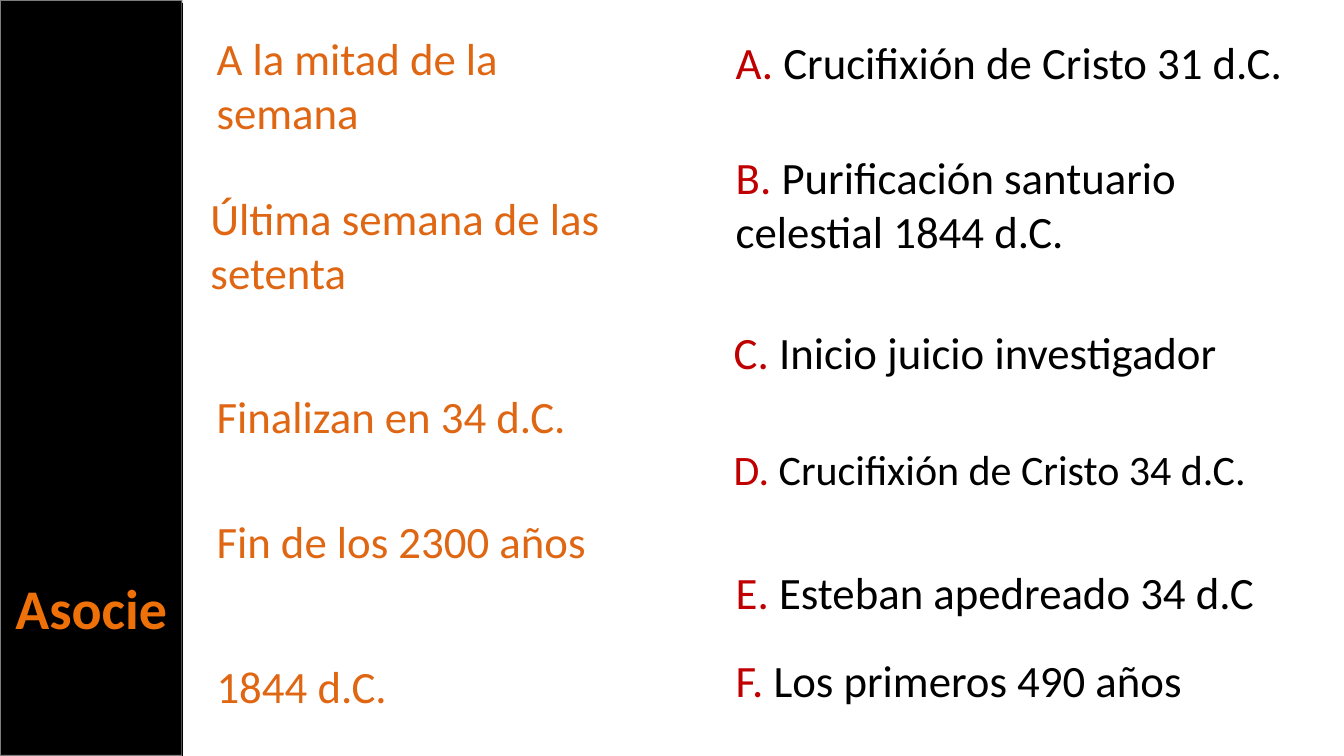
from dataclasses import dataclass

from lxml.etree import SubElement
from pptx import Presentation
from pptx.dml.color import RGBColor
from pptx.enum.shapes import MSO_CONNECTOR, MSO_SHAPE
from pptx.enum.text import MSO_ANCHOR, MSO_AUTO_SIZE, PP_ALIGN
from pptx.oxml.ns import qn
from pptx.slide import Slide
from pptx.util import Pt

BLACK = RGBColor(0x00, 0x00, 0x00)
PALE_GRAY = RGBColor(0xF9, 0xF9, 0xF9)
ORANGE = RGBColor(0xDF, 0x66, 0x13)
BRIGHT_ORANGE = RGBColor(0xEE, 0x70, 0x08)
RED = RGBColor(0xC0, 0x00, 0x00)

FONT = "Calibri"
PAGE_WIDTH = 960
PAGE_HEIGHT = 540
SIDEBAR_WIDTH = 130.3


@dataclass(frozen=True)
class Entry:
    text: str
    left: float
    top: float
    width: float
    height: float = 46
    letter: str = ""
    size: float = 32


CLUES = [
    Entry("A la mitad de la semana", 147.6, 18.7, 297.4, 85),
    Entry("Última semana de las setenta", 143.3, 132.5, 297.4, 85),
    Entry("Finalizan en 34 d.C.", 147.6, 274.3, 297.4),
    Entry("Fin de los 2300 años", 147.6, 363.6, 316),
    Entry("1844 d.C.", 147.6, 466.6, 330.5),
]
ANSWERS = [
    Entry("Crucifixión de Cristo 31 d.C.", 518.4, 20.9, 413.3, letter="A"),
    Entry("Purificación santuario celestial 1844 d.C.", 518.4, 103.7, 387.4, 85, "B"),
    Entry("Inicio juicio investigador", 517, 228.2, 387.4, letter="C"),
    Entry("Crucifixión de Cristo 34 d.C.", 517, 313.2, 393.8, 44, "D", 30),
    Entry("Esteban apedreado 34 d.C", 518.4, 399.6, 402.5, letter="E"),
    Entry("Los primeros 490 años", 518.4, 463, 402.5, letter="F"),
]


def add_entry(page: Slide, entry: Entry) -> None:
    box = page.shapes.add_textbox(
        Pt(entry.left), Pt(entry.top), Pt(entry.width), Pt(entry.height)
    )
    frame = box.text_frame
    frame.word_wrap = True
    frame.auto_size = MSO_AUTO_SIZE.SHAPE_TO_FIT_TEXT
    para = frame.paragraphs[0]
    para.font.name = FONT
    para.font.size = Pt(entry.size)
    if entry.letter:
        parts = [(f"{entry.letter}. ", RED), (entry.text, BLACK)]
    else:
        parts = [(entry.text, ORANGE)]
    for text, color in parts:
        span = para.add_run()
        span.text = text
        span.font.color.rgb = color


def add_sidebar(page: Slide) -> None:
    sidebar = page.shapes.add_shape(
        MSO_SHAPE.RECTANGLE, 0, 0, Pt(SIDEBAR_WIDTH), Pt(PAGE_HEIGHT)
    )
    sidebar.shadow.inherit = False
    sidebar.fill.solid()
    sidebar.fill.fore_color.rgb = BLACK
    sidebar.line.color.rgb = PALE_GRAY
    sidebar.line.width = Pt(1.35)
    line_color = sidebar.element.spPr.find(qn("a:ln")).find(f".//{qn('a:srgbClr')}")
    SubElement(line_color, qn("a:alpha"), val="50000")
    page.shapes.title.element.addprevious(sidebar.element)


def format_title(page: Slide) -> None:
    title = page.shapes.title
    title.left, title.top = Pt(0), Pt(406)
    title.width, title.height = Pt(SIDEBAR_WIDTH), Pt(55.7)
    frame = title.text_frame
    frame.text = "Asocie"
    frame.word_wrap = True
    frame.auto_size = MSO_AUTO_SIZE.SHAPE_TO_FIT_TEXT
    frame.vertical_anchor = MSO_ANCHOR.TOP
    para = frame.paragraphs[0]
    para.alignment = PP_ALIGN.CENTER
    para.font.name = FONT
    para.font.size = Pt(40)
    para.font.bold = True
    para.font.color.rgb = BRIGHT_ORANGE


def add_divider(page: Slide) -> None:
    divider = page.shapes.add_connector(
        MSO_CONNECTOR.STRAIGHT,
        Pt(SIDEBAR_WIDTH), Pt(2), Pt(SIDEBAR_WIDTH), Pt(PAGE_HEIGHT),
    )
    divider.line.color.rgb = BLACK
    divider.line.width = Pt(0.85)
    SubElement(divider.element.spPr, qn("a:effectLst"))


def main() -> None:
    deck = Presentation()
    deck.slide_width = Pt(PAGE_WIDTH)
    deck.slide_height = Pt(PAGE_HEIGHT)
    page = deck.slides.add_slide(deck.slide_layouts.get_by_name("Title Only"))
    format_title(page)
    add_sidebar(page)
    for entry in CLUES + ANSWERS:
        add_entry(page, entry)
    add_divider(page)
    deck.save("out.pptx")


if __name__ == "__main__":
    main()
